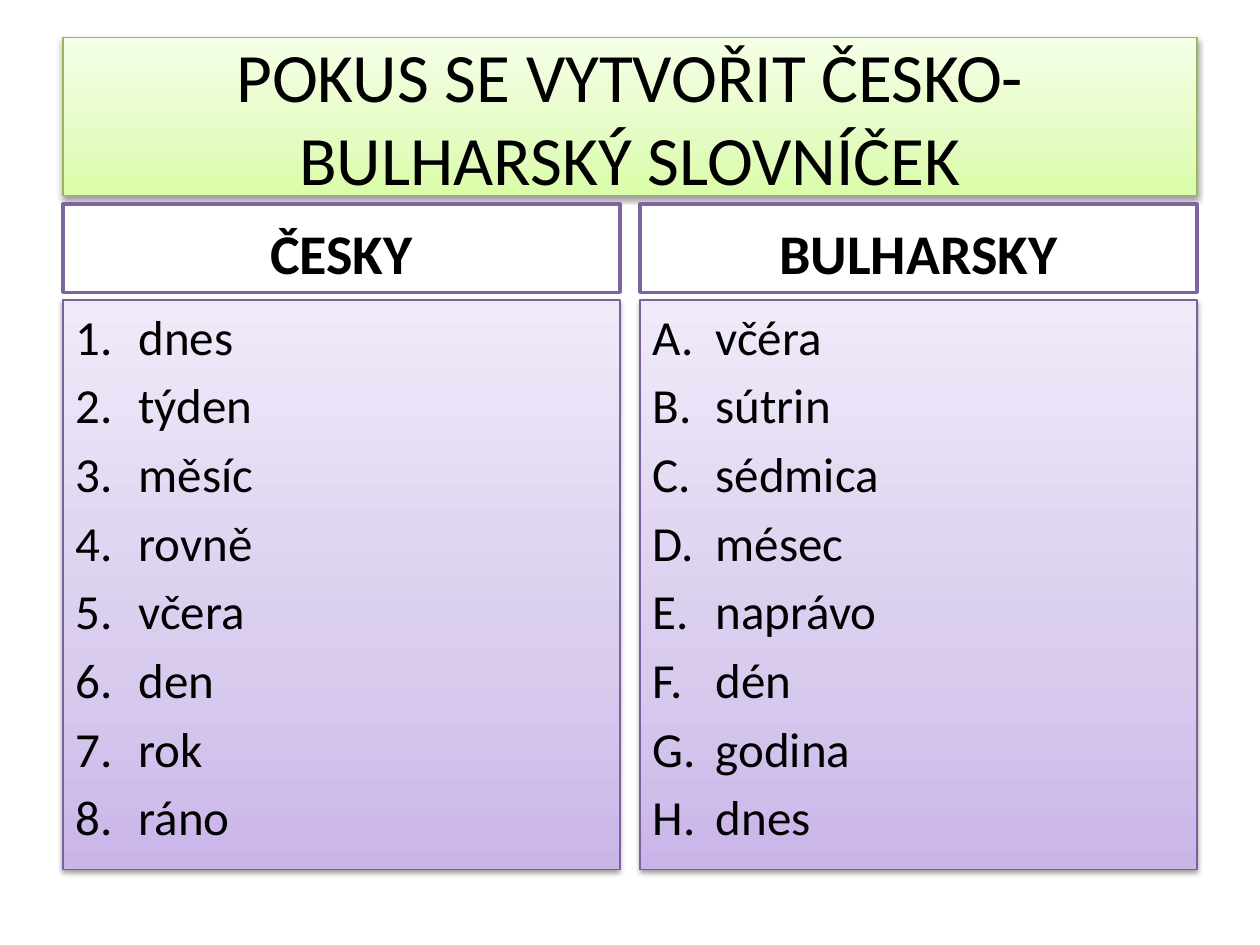
from copy import deepcopy
from dataclasses import dataclass

from lxml import etree
from pptx import Presentation
from pptx.dml.color import RGBColor
from pptx.enum.text import MSO_ANCHOR, MSO_AUTO_SIZE, PP_ALIGN
from pptx.oxml.ns import qn
from pptx.util import Inches, Pt

CENTER = PP_ALIGN.CENTER
TOP, MIDDLE, BOTTOM = MSO_ANCHOR.TOP, MSO_ANCHOR.MIDDLE, MSO_ANCHOR.BOTTOM
NO_AUTOFIT = MSO_AUTO_SIZE.NONE
COMPARISON_LAYOUT = 4


@dataclass(frozen=True)
class Theme:
    font: str = "Calibri"
    text: str = "000000"
    white: str = "FFFFFF"
    green_line: str = "98B955"
    purple_line: str = "7D60A0"
    heading_line: str = "8064A2"
    # Gradients run from the bottom edge upwards
    green: tuple = ("DAFDA7", "E4FCC2", "F5FFE7")
    purple: tuple = ("C9B5E8", "D8CBEE", "F0EAF9")
    stops: tuple = (0, 0.35, 1)
    title_size: float = 39.6
    heading_size: float = 32
    list_size: float = 28


THEME = Theme()

# Heading placeholder, list placeholder, left edge, numbering, heading, words
COLUMNS = [
    (1, 2, 0.5, "arabicPeriod", "ČESKY",
     ["dnes", "týden", "měsíc", "rovně", "včera", "den", "rok", "ráno"]),
    (3, 4, 5.08, "alphaUcPeriod", "BULHARSKY",
     ["včéra", "sútrin", "sédmica", "mésec", "naprávo", "dén", "godina", "dnes"]),
]
COLUMN_WIDTH = 4.42


def place(box, left, top, width, height, anchor):
    box.left, box.top = Inches(left), Inches(top)
    box.width, box.height = Inches(width), Inches(height)
    frame = box.text_frame
    frame.word_wrap = True
    frame.auto_size = NO_AUTOFIT
    frame.vertical_anchor = anchor


def outline(box, color, width):
    box.line.color.rgb = RGBColor.from_string(color)
    box.line.width = Pt(width)


def fill_gradient(box, colors):
    box.fill.gradient()
    box.fill.gradient_angle = 90
    stop_list = box.element.spPr.find(qn("a:gradFill")).find(qn("a:gsLst"))
    stop_list.append(deepcopy(stop_list[-1]))
    for stop, color, position in zip(box.fill.gradient_stops, colors, THEME.stops):
        stop.color.rgb = RGBColor.from_string(color)
        stop.position = position


def add_shadow(box):
    effects = etree.SubElement(box.element.spPr, qn("a:effectLst"))
    shadow = etree.SubElement(effects, qn("a:outerShdw"), blurRad=str(Pt(3.1)),
                              dist=str(Pt(1.6)), dir="5400000", rotWithShape="0")
    color = etree.SubElement(shadow, qn("a:srgbClr"), val="000000")
    etree.SubElement(color, qn("a:alpha"), val="38000")


def style_panel(box, colors, line_color):
    fill_gradient(box, colors)
    outline(box, line_color, 0.75)
    add_shadow(box)


def style_text(para, size, bold=False):
    para.font.name = THEME.font
    para.font.size = Pt(size)
    para.font.bold = bold
    para.font.color.rgb = RGBColor.from_string(THEME.text)


def number_paragraph(para, scheme):
    properties = para._p.get_or_add_pPr()
    properties.set("marL", str(Inches(0.5)))
    properties.set("indent", str(Inches(-0.5)))
    etree.SubElement(properties, qn("a:buFont"), typeface="+mj-lt")
    etree.SubElement(properties, qn("a:buAutoNum"), type=scheme)


def fill_title(box, text):
    place(box, 0.5, 0.3, 9, 1.25, MIDDLE)
    style_panel(box, THEME.green, THEME.green_line)
    box.text_frame.text = text
    para = box.text_frame.paragraphs[0]
    para.alignment = CENTER
    style_text(para, THEME.title_size)


def fill_heading(box, left, text):
    place(box, left, 1.62, COLUMN_WIDTH, 0.7, BOTTOM)
    box.fill.solid()
    box.fill.fore_color.rgb = RGBColor.from_string(THEME.white)
    outline(box, THEME.heading_line, 2)
    box.text_frame.text = text
    para = box.text_frame.paragraphs[0]
    para.alignment = CENTER
    style_text(para, THEME.heading_size, bold=True)


def fill_word_list(box, left, scheme, words):
    place(box, left, 2.38, COLUMN_WIDTH, 4.52, TOP)
    style_panel(box, THEME.purple, THEME.purple_line)
    box.text_frame.text = "\n".join(words)
    for para in box.text_frame.paragraphs:
        number_paragraph(para, scheme)
        style_text(para, THEME.list_size)


def main():
    deck = Presentation()
    deck.slide_width, deck.slide_height = Inches(10), Inches(7.5)
    page = deck.slides.add_slide(deck.slide_layouts[COMPARISON_LAYOUT])
    boxes = {box.placeholder_format.idx: box for box in page.placeholders}

    # Title band
    fill_title(boxes[0], "POKUS SE VYTVOŘIT ČESKO-BULHARSKÝ SLOVNÍČEK")

    # Czech and Bulgarian columns
    for heading_id, list_id, left, scheme, heading, words in COLUMNS:
        fill_heading(boxes[heading_id], left, heading)
        fill_word_list(boxes[list_id], left, scheme, words)

    deck.save("out.pptx")


if __name__ == "__main__":
    main()
